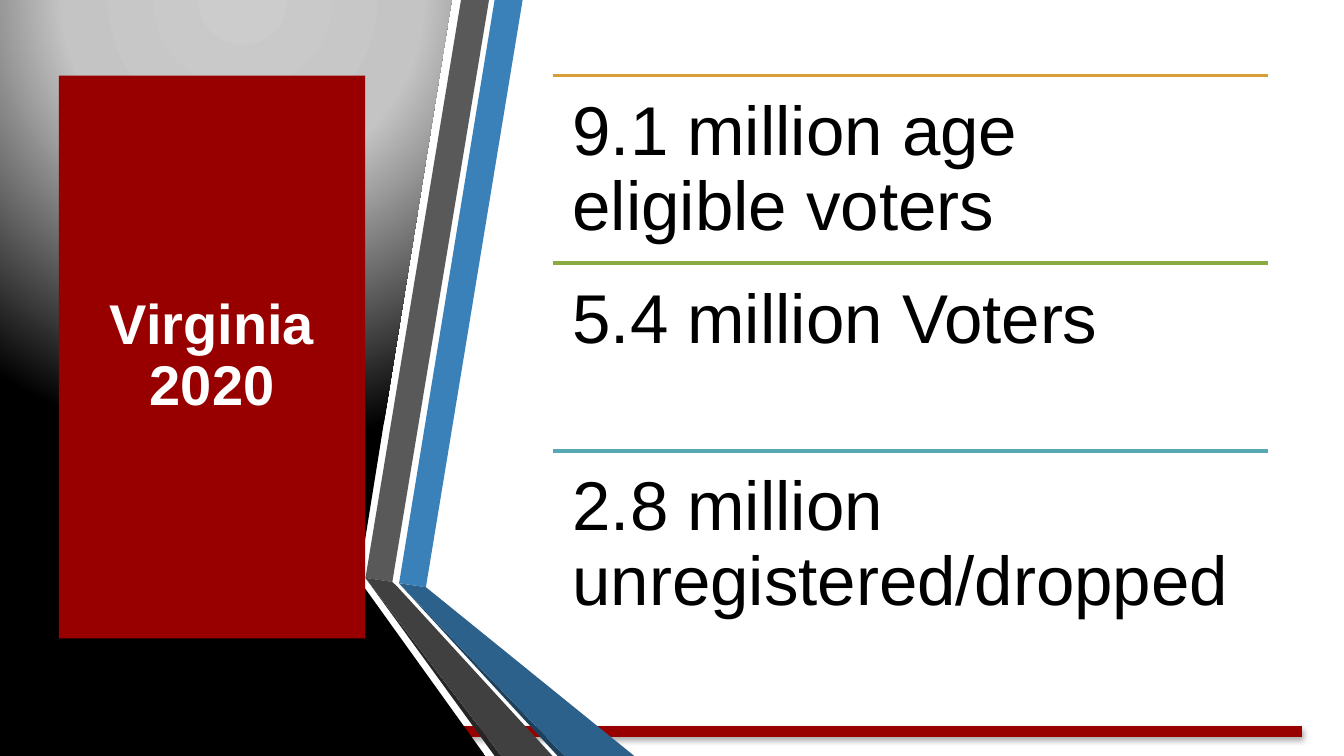
from pptx import Presentation
from pptx import util as u
from pptx.dml.color import RGBColor
from pptx.enum import shapes, text
from pptx.oxml import parse_xml
from pptx.oxml.ns import nsdecls, qn

W, H = 720, 405


def rgb(value):
    return RGBColor.from_string(value)


class Deck:
    font = "Arial"
    red, white, black = "980000", "FFFFFF", "000000"

    def __init__(self):
        self.prs = Presentation()
        self.prs.slide_width, self.prs.slide_height = u.Pt(W), u.Pt(H)
        self.s = self.prs.slides.add_slide(self.prs.slide_layouts[5])
        self.s.background.fill.solid()
        self.s.background.fill.fore_color.rgb = rgb(self.white)

    def line(self, x1, x2, y, color, width, shadow=""):
        sp = self.s.shapes.add_connector(
            shapes.MSO_CONNECTOR.STRAIGHT, u.Pt(x1), u.Pt(y), u.Pt(x2), u.Pt(y))
        sp.line.color.rgb = rgb(color)
        sp.line.width = u.Pt(width)
        sp._element.spPr.append(parse_xml(
            f"<a:effectLst {nsdecls('a')}>{shadow}</a:effectLst>"))

    def polygon(self, points, color=None):
        pts = [(u.Pt(x), u.Pt(y)) for x, y in points]
        fb = self.s.shapes.build_freeform(*pts[0])
        fb.add_line_segments(pts[1:], close=True)
        sp = fb.convert_to_shape()
        sp.shadow.inherit = False
        sp.line.fill.background()
        if color:
            sp.fill.solid()
            sp.fill.fore_color.rgb = rgb(color)
        return sp

    def radial(self, points, stops):
        sp = self.polygon(points)
        sp.fill.gradient()
        spPr = sp._element.spPr
        gs = "".join(f'<a:gs pos="{pos * 1000}"><a:srgbClr val="{c}"/></a:gs>'
                     for pos, c in stops)
        spPr.replace(spPr.find(qn("a:gradFill")), parse_xml(
            f'<a:gradFill {nsdecls("a")} rotWithShape="1"><a:gsLst>{gs}</a:gsLst>'
            '<a:path path="circle"><a:fillToRect l="50000" t="-80000" '
            'r="50000" b="180000"/></a:path></a:gradFill>'))

    def set_text(self, sp, words, size, color, bold=False,
                 align=text.PP_ALIGN.LEFT, anchor=text.MSO_ANCHOR.TOP):
        tf = sp.text_frame
        tf.text = words
        tf.word_wrap = True
        tf.auto_size = text.MSO_AUTO_SIZE.NONE
        tf.vertical_anchor = anchor
        p = tf.paragraphs[0]
        p.alignment, p.line_spacing = align, 0.9
        r = p.runs[0]
        r.font.name, r.font.size, r.font.bold = self.font, u.Pt(size), bold
        r.font.color.rgb = rgb(color)
        return tf

    def title(self, words, x, y, w, h):
        sp = self.s.shapes.title
        sp.left, sp.top, sp.width, sp.height = map(u.Pt, (x, y, w, h))
        sp.fill.solid()
        sp.fill.fore_color.rgb = rgb(self.red)
        self.set_text(sp, words, 30, self.white, True, text.PP_ALIGN.CENTER,
                      text.MSO_ANCHOR.MIDDLE)
        # Bring the title in front of everything drawn so far
        self.s.shapes._spTree.append(sp._element)

    def fact(self, words, x, y, w, h, color):
        self.line(x, x + w, y, color, 2)
        sp = self.s.shapes.add_textbox(*map(u.Pt, (x, y, w, h)))
        tf = self.set_text(sp, words, 37, self.black)
        tf.margin_left = tf.margin_right = u.Pt(10.8)
        tf.margin_top = tf.margin_bottom = u.Pt(10.8)


def main():
    d = Deck()

    # Red footer rule with a soft shadow
    d.line(62.6, 697.7, 391.7, d.red, 6,
           '<a:outerShdw blurRad="39370" dist="22860" dir="5400000" rotWithShape="0">'
           '<a:srgbClr val="000000"><a:alpha val="35000"/></a:srgbClr></a:outerShdw>')

    # Dark panel on the left
    d.radial([(0, 0), (242, 0), (192.2, 310.5), (260, H), (0, H)],
             [(0, "CCCCCC"), (40, "C4C4C4"), (100, "000000")])

    # Folded ribbons: corners where each one bends
    blue_l, blue_r = (213.8, 312.5), (228.2, 314.6)
    grey_l, grey_r = (195.8, 309.6), (210.2, 311.8)
    ribbons = [
        ("3A81BA", [blue_l, blue_r, (280, 0), (265, 0)]),
        ("595959", [grey_l, grey_r, (262, 0), (247, 0)]),
        ("262626", [grey_l, (265, H), (268.6, H)]),
        ("1D405D", [blue_l, (298.8, H), (302.4, H)]),
        ("2B618B", [blue_l, (302.4, H), (339.8, H), blue_r]),
        ("404040", [grey_l, (268.6, H), (296, H), (213.1, 314.6), grey_r]),
    ]
    for color, points in ribbons:
        d.polygon(points, color)

    d.title("Virginia 2020", 31.6, 40.5, 164, 301.5)

    # Facts, each under its own rule
    top, step = 40.5, 100.5
    facts = [("9.1 million age eligible voters", "D89F39"),
             ("5.4 million Voters", "8BAB42"),
             ("2.8 million unregistered/dropped", "57A7B5")]
    for i, (words, color) in enumerate(facts):
        d.fact(words, 296, top + i * step, 383.4, step, color)

    d.prs.save("out.pptx")


if __name__ == "__main__":
    main()
